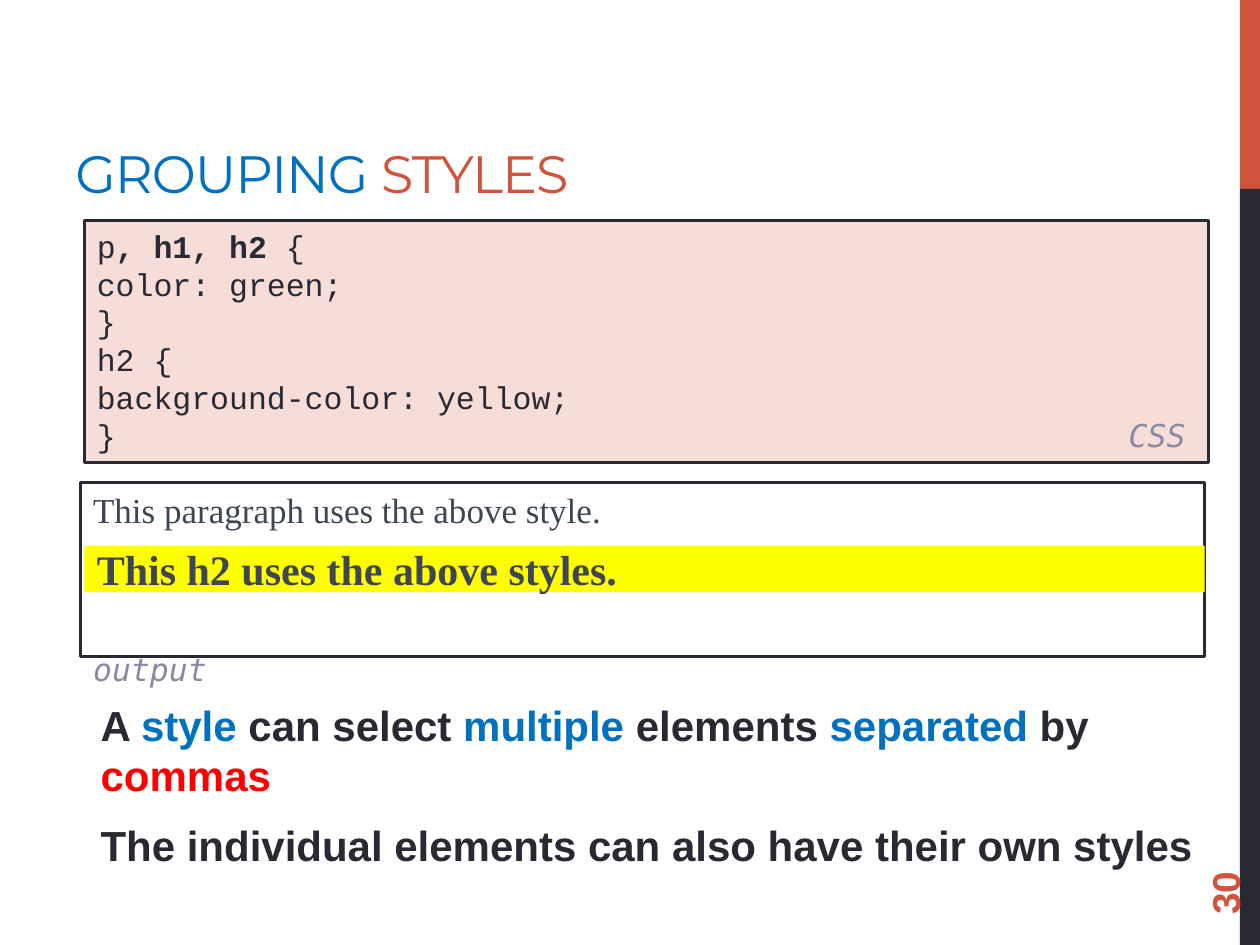
from lxml import etree
from pptx import Presentation
from pptx.dml.color import RGBColor as RGB
from pptx.enum.shapes import MSO_SHAPE as Kind
from pptx.enum.text import MSO_ANCHOR as Anchor, PP_ALIGN as Align
from pptx.oxml.ns import qn
from pptx.util import Inches, Pt

RED, INK, BLUE, GRAY, SLATE = "D2533C", "292934", "0070C0", "8A8AA3", "3E4652"
CODE, NOTE, SERIF = "Courier New", "DejaVu Sans Mono", "Times New Roman"

deck = Presentation()
deck.slide_width, deck.slide_height = Inches(10), Inches(7.5)
slide = deck.slides.add_slide(deck.slide_layouts[6])


def add_box(place, fill=None, edge=None, anchor=Anchor.TOP):
    """Add a rectangle, or a text box when no fill is given."""
    spot = [Inches(n) for n in place]
    if fill:
        box = slide.shapes.add_shape(Kind.RECTANGLE, *spot)
        box.shadow.inherit = False
        box.fill.solid()
        box.fill.fore_color.rgb = RGB.from_string(fill)
        if edge:
            box.line.color.rgb = RGB.from_string(edge)
            box.line.width = Pt(1.5)
        else:
            box.line.fill.background()
    else:
        box = slide.shapes.add_textbox(*spot)
    box.text_frame.word_wrap = True
    box.text_frame.vertical_anchor = anchor
    box.text_frame.paragraphs[0].alignment = Align.LEFT
    return box


def add_run(para, text, size, name, color, bold=False, italic=False):
    run = para.add_run()
    run.text = text
    font = run.font
    font.size, font.name, font.bold, font.italic = Pt(size), name, bold, italic
    font.color.rgb = RGB.from_string(color)
    return run


# Side bar
add_box((9.84, 0, 0.16, 1.5), RED)
add_box((9.84, 1.5, 0.16, 6), INK)

# Title
title = add_box((0.5, 0.17, 8.33, 1.5), anchor=Anchor.BOTTOM)
for text, color in (("GROUPING", BLUE), (" STYLES", RED)):
    run = add_run(title.text_frame.paragraphs[0], text, 30, "Montserrat", color)
    run.font._element.set("spc", "-60")

# Main points
points = [
    [("A ", INK), ("style", BLUE), (" can select ", INK), ("multiple", BLUE),
     (" elements ", INK), ("separated", BLUE), (" by ", INK), ("commas", "FF0000")],
    [("The individual elements can also have their own styles", INK)],
]
frame = add_box((0.7, 5.5, 8.92, 1.67)).text_frame
for i, point in enumerate(points):
    para = frame.add_paragraph() if i else frame.paragraphs[0]
    para.space_before, para.space_after = Pt(5 if i else 0), Pt(6)
    for text, color in point:
        add_run(para, text, 24, "Arial", color, bold=True)

# Page number
page = add_box((9, 6.44, 1.44, 0.4), anchor=Anchor.MIDDLE)
page.rotation = 270
add_run(page.text_frame.paragraphs[0], "30", 22.2, "Arial", RED, bold=True)

# Style sheet
lines = [
    [("p", False), (", h1, h2 ", True), ("{", False)],
    [("color: green;", False)],
    [("}", False)],
    [("h2 {", False)],
    [("background-color: yellow;", False)],
    [("}\t", False)],
]
frame = add_box((0.67, 1.75, 8.92, 1.92), "F6DDD8", INK).text_frame
for i, line in enumerate(lines):
    para = frame.add_paragraph() if i else frame.paragraphs[0]
    para.alignment = Align.LEFT
    for text, bold in line:
        add_run(para, text, 18, CODE, INK, bold)
tabs = etree.SubElement(para._p.get_or_add_pPr(), qn("a:tabLst"))
etree.SubElement(tabs, qn("a:tab"), pos=str(Inches(8.64)), algn="r")
add_run(para, "CSS", 18, NOTE, GRAY, italic=True)

# Rendered result
frame = add_box((0.64, 3.83, 8.92, 1.38), "FFFFFF", INK).text_frame
add_run(frame.paragraphs[0], "This paragraph uses the above style.", 20, SERIF, SLATE)
para = frame.add_paragraph()
para.alignment = Align.LEFT
para.space_before = Pt(68)
add_run(para, "output", 18, NOTE, GRAY, italic=True)

band = add_box((0.67, 4.33, 8.89, 0.37), "FFFF00", anchor=Anchor.MIDDLE)
add_run(band.text_frame.paragraphs[0], "This h2 uses the above styles.", 24, SERIF, SLATE, bold=True)

deck.save("out.pptx")
